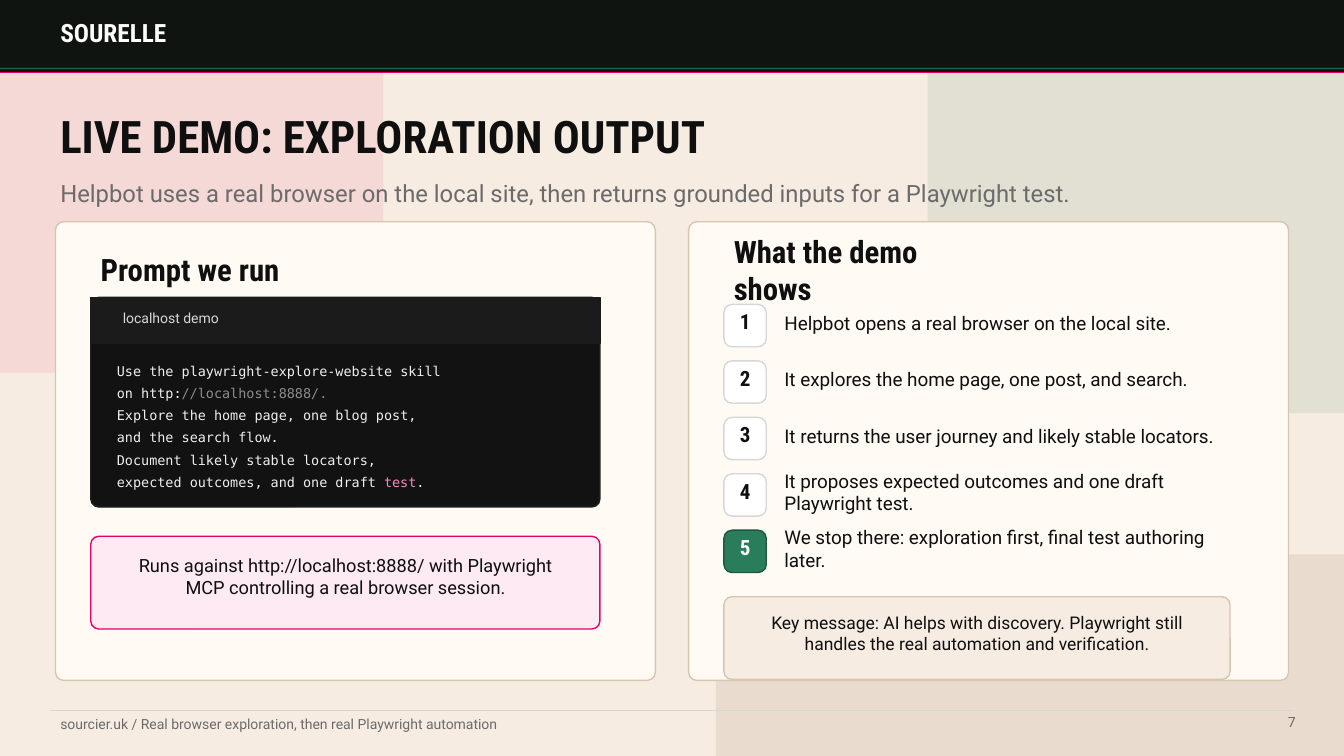
from pptx import Presentation
from pptx.dml.color import RGBColor
from pptx.enum.shapes import MSO_CONNECTOR, MSO_SHAPE
from pptx.enum.text import MSO_ANCHOR, PP_ALIGN
from pptx.oxml.ns import qn
from pptx.util import Emu, Pt
from lxml.etree import SubElement

INK, GREY, PALE, WHITE = "0F0F0F", "6B6B6B", "D7D7D7", "FFFFFF"
PINK, GREEN, SAND, CREAM = "E8006A", "2A7D5B", "F6ECE1", "FFFAF4"
EDGE, CODE = "D8C5AE", "EFEFEF"
BODY, HEAD, MONO = "Roboto", "Roboto Condensed", "DejaVu Sans Mono"


def px(n):
    """One px is a hundredth of an inch."""
    return Emu(n * 9144)


def rgb(code):
    return RGBColor.from_string(code)


def fade(part, alpha):
    """Set the opacity, in percent, of the first colour in a shape."""
    color = next(part.element.spPr.iter(qn("a:srgbClr")))
    SubElement(color, qn("a:alpha")).set("val", str(alpha * 1000))


class Deck:
    def __init__(self, width, height, back):
        self.prs = Presentation()
        self.prs.slide_width, self.prs.slide_height = px(width), px(height)
        self.slide = self.prs.slides.add_slide(self.prs.slide_layouts[6])
        fill = self.slide.background.fill
        fill.solid()
        fill.fore_color.rgb = rgb(back)

    def box(self, x, y, w, h, fill, line=None, radius=8, alpha=None):
        kind = MSO_SHAPE.ROUNDED_RECTANGLE if radius else MSO_SHAPE.RECTANGLE
        shape = self.slide.shapes.add_shape(kind, px(x), px(y), px(w), px(h))
        shape.shadow.inherit = False
        if radius:
            shape.adjustments[0] = radius / min(w, h)
        shape.fill.solid()
        shape.fill.fore_color.rgb = rgb(fill)
        if line:
            shape.line.color.rgb = rgb(line)
            shape.line.width = Pt(1)
        else:
            shape.line.fill.background()
        if alpha:
            fade(shape, alpha)

    def rule(self, x, y, end, color, alpha=None):
        line = self.slide.shapes.add_connector(
            MSO_CONNECTOR.STRAIGHT, px(x), px(y), px(end), px(y))
        line.line.color.rgb = rgb(color)
        line.line.width = Pt(1)
        if alpha:
            fade(line, alpha)
        SubElement(line.element.spPr, qn("a:effectLst"))

    def text(self, x, y, w, h, parts, size, color=INK, font=BODY, bold=False,
             align=PP_ALIGN.LEFT, anchor=MSO_ANCHOR.MIDDLE, flush=False):
        """Add text; parts is a string or a list of (string, colour) runs."""
        frame = self.slide.shapes.add_textbox(
            px(x), px(y), px(w), px(h)).text_frame
        frame.word_wrap = True
        frame.vertical_anchor = anchor
        if flush:
            frame.margin_left = frame.margin_right = 0
            frame.margin_top = frame.margin_bottom = 0
        para = frame.paragraphs[0]
        para.alignment = align
        if isinstance(parts, str):
            parts = [(parts, color)]
        for words, tint in parts:
            run = para.add_run()
            run.text = words
            run.font.name, run.font.size = font, Pt(size)
            run.font.bold = bold
            run.font.color.rgb = rgb(tint)

    def title(self, x, y, w, h, words, size, color=INK):
        self.text(x, y, w, h, words, size, color, HEAD, True)

    def step(self, y, num, words, last):
        fill, line, ink = (GREEN, "1B5A40", WHITE) if last else (WHITE, PALE, INK)
        self.box(718, y, 42, 42, fill, line)
        self.text(718, y + 9, 42, 16, str(num), 15, ink, HEAD, True,
                  PP_ALIGN.CENTER, flush=True)
        self.text(778, y + 1, 435, 34, words, 13.5, flush=True)


def main():
    deck = Deck(1333, 750, SAND)

    # Backdrop and header
    deck.box(-210, -120, 590, 490, PINK, radius=30, alpha=8)
    deck.box(920, -150, 620, 560, GREEN, radius=30, alpha=10)
    deck.box(710, 550, 810, 340, "E5D8C9", radius=30, alpha=76)
    deck.box(0, 0, 1333, 72, "101410", "101410", radius=0)
    deck.rule(0, 72, 1333, PINK)
    deck.rule(0, 68, 1333, GREEN, alpha=76)
    deck.title(50, 17, 280, 30, "SOURELLE", 18, WHITE)
    deck.title(50, 100, 890, 70, "LIVE DEMO: EXPLORATION OUTPUT", 32)
    deck.text(50, 172, 1040, 38,
              "Helpbot uses a real browser on the local site, then returns "
              "grounded inputs for a Playwright test.",
              17, GREY, anchor=MSO_ANCHOR.TOP)
    for x in (55, 683):
        deck.box(x, 220, 595, 455, CREAM, EDGE)

    # Prompt panel
    deck.title(90, 255, 280, 25, "Prompt we run", 22)
    deck.box(90, 295, 505, 208, "121212", "1F1F1F")
    deck.box(90, 295, 505, 46, "1B1B1B", "1B1B1B", radius=0)
    deck.text(112, 307, 461, 16, "localhost demo", 10, "D9D9D9")
    prompt = [
        "Use the playwright-explore-website skill",
        [("on http:", CODE), ("//localhost:8888/.", "8C8C8C")],
        "Explore the home page, one blog post,",
        "and the search flow.",
        "Document likely stable locators,",
        [("expected outcomes, and one draft ", CODE), ("test", "F58AC1"),
         (".", CODE)],
    ]
    for i, row in enumerate(prompt):
        deck.text(116, 359 + 22 * i, 453, 18, row, 9.6, CODE, MONO, flush=True)
    deck.box(90, 532, 505, 92, "FDEAF2", PINK)
    deck.text(115, 558, 455, 28,
              "Runs against http://localhost:8888/ with Playwright MCP "
              "controlling a real browser session.",
              13, align=PP_ALIGN.CENTER)

    # Steps panel
    deck.title(718, 255, 280, 25, "What the demo shows", 22)
    steps = [
        "Helpbot opens a real browser on the local site.",
        "It explores the home page, one post, and search.",
        "It returns the user journey and likely stable locators.",
        "It proposes expected outcomes and one draft Playwright test.",
        "We stop there: exploration first, final test authoring later.",
    ]
    for i, words in enumerate(steps):
        deck.step(302 + 56 * i, i + 1, words, i == len(steps) - 1)
    deck.box(718, 592, 502, 82, SAND, EDGE)
    deck.text(742, 617, 454, 22,
              "Key message: AI helps with discovery. Playwright still handles "
              "the real automation and verification.",
              12.5, align=PP_ALIGN.CENTER)

    # Footer
    deck.rule(50, 705, 1283, PALE)
    deck.text(50, 708, 600, 20,
              "sourcier.uk / Real browser exploration, then real Playwright "
              "automation", 10, GREY)
    deck.text(1175, 708, 110, 20, "7", 10, GREY, align=PP_ALIGN.RIGHT,
              anchor=MSO_ANCHOR.TOP, flush=True)

    deck.prs.save("out.pptx")


if __name__ == "__main__":
    main()
